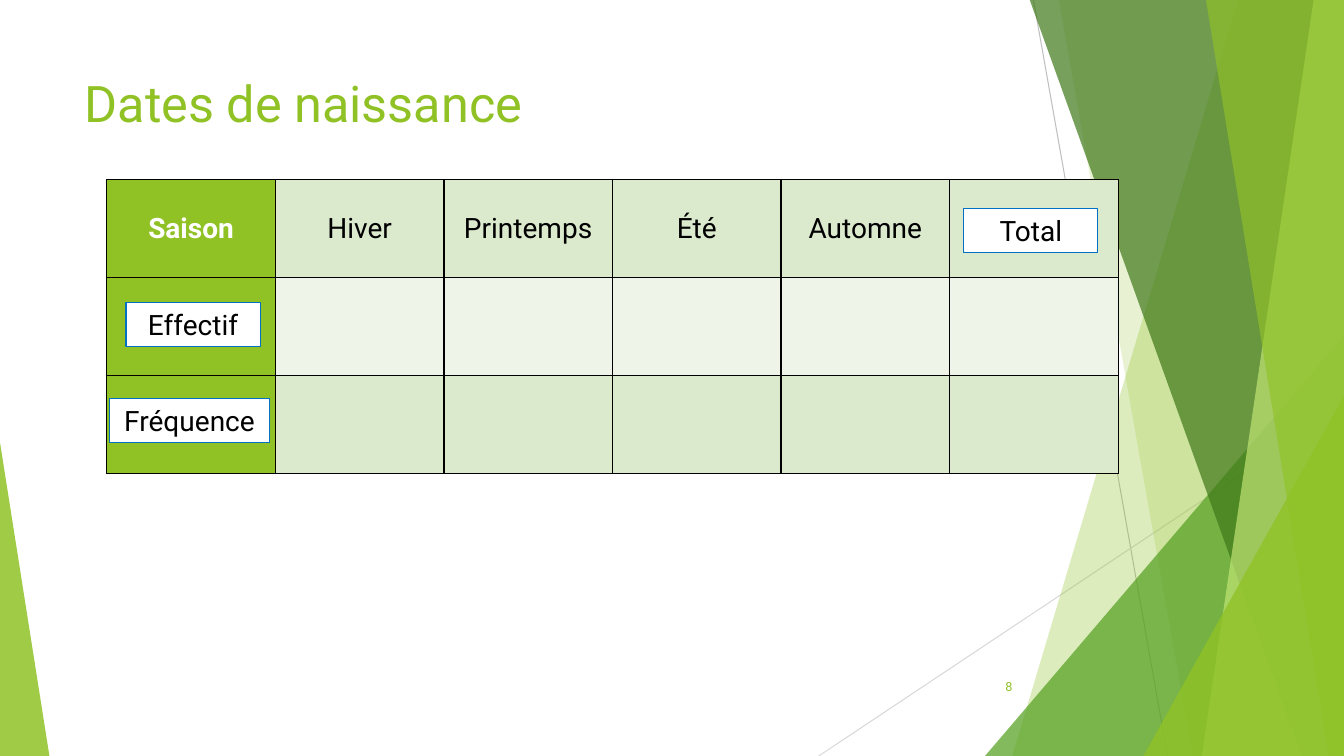
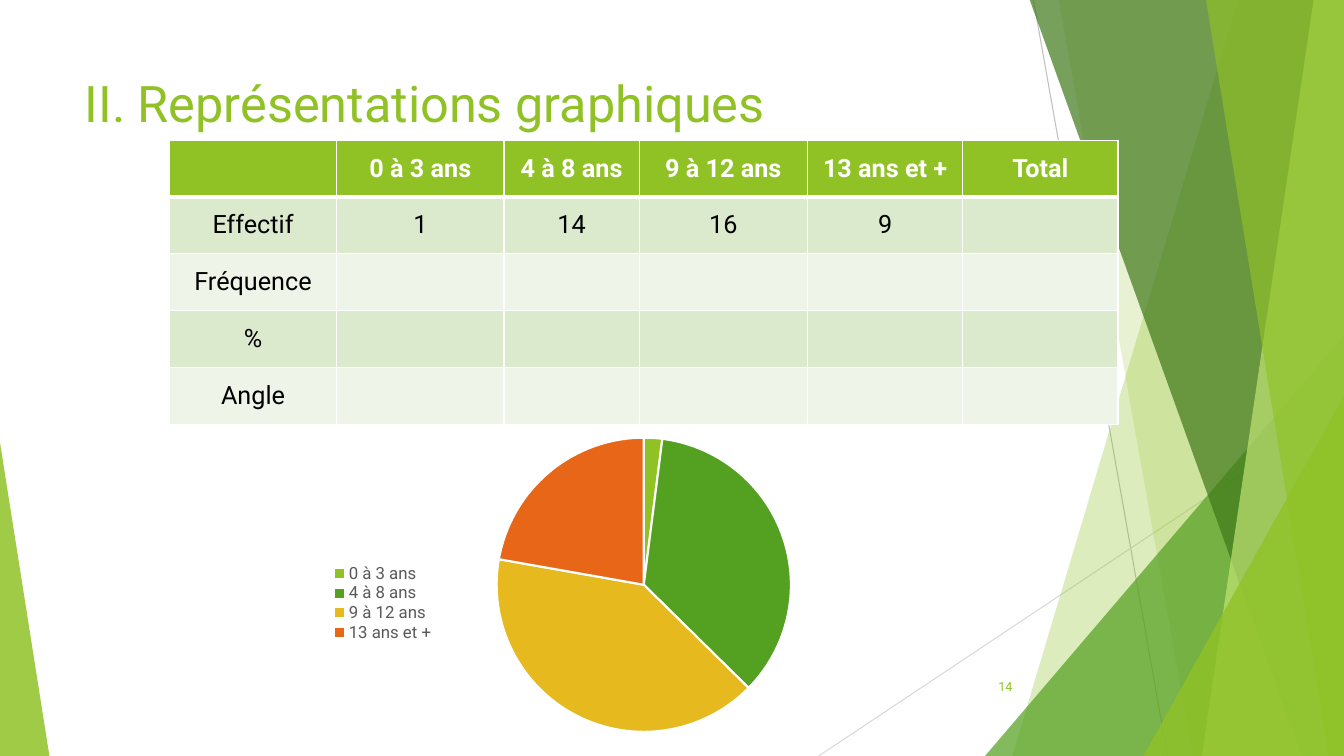
from dataclasses import dataclass

from lxml.etree import SubElement
from pptx import Presentation
from pptx.chart.data import CategoryChartData
from pptx.dml.color import RGBColor
from pptx.enum.chart import XL_CHART_TYPE as ChartType, XL_LEGEND_POSITION as LegendPosition
from pptx.enum.shapes import MSO_CONNECTOR as Connector, MSO_SHAPE as Shape
from pptx.enum.text import MSO_ANCHOR as Anchor, MSO_AUTO_SIZE as AutoSize, PP_ALIGN as Align
from pptx.oxml import parse_xml
from pptx.oxml.ns import nsdecls, qn
from pptx.util import Inches, Pt

FONT = "Roboto"
GREEN, DARK_GREEN, FOREST, LIME = "90C226", "54A021", "3F7819", "C0E474"
WHITE, BLACK, GREY, BLUE = "FFFFFF", "000000", "595959", "0070C0"
GOLD, ORANGE = "E6B91E", "E76618"
BANDS = ("DBE9CD", "EEF4E8")
PIE_COLOURS = (GREEN, DARK_GREEN, GOLD, ORANGE)
TOP, BOTTOM, RIGHT = -0.01, 7.5, 13.33


@dataclass(frozen=True)
class Ray:
    """A thin straight line of the backdrop."""
    start: tuple[float, float]
    end: tuple[float, float]
    colour: str


@dataclass(frozen=True)
class Beam:
    """A band from the top to the bottom edge, open to the right edge."""
    top_left: float
    bottom_left: float
    colour: str
    alpha: int


@dataclass(frozen=True)
class Wedge:
    """A right triangle standing on the bottom edge."""
    left: float
    top: float
    width: float
    apex: float
    colour: str
    alpha: int


@dataclass(frozen=True)
class Card:
    """A white label laid over a table cell."""
    label: str
    left: float
    top: float
    width: float = 1.33


@dataclass(frozen=True)
class Grid:
    """A table with a header column or a header row."""
    left: float
    top: float
    columns: tuple[float, ...]
    height: float
    rows: tuple[tuple[str, ...], ...]
    size: int
    border: str
    header_row: bool


BACKDROP = (
    Ray((10.25, 0), (11.58, 7.5), "BFBFBF"),
    Ray((13.33, 4.03), (8.12, 7.5), "D9D9D9"),
    Beam(12.28, 10.04, GREEN, 30),
    Beam(10.5, 11.83, GREEN, 20),
    Wedge(9.77, 3.33, 3.56, 1, DARK_GREEN, 72),
    Beam(10.21, 12.91, FOREST, 70),
    Beam(13.03, 11.92, LIME, 70),
    Beam(11.96, 13.18, GREEN, 65),
    Wedge(11.34, 3.93, 1.99, 1, GREEN, 80),
    Wedge(0, 4.39, 0.49, 0, GREEN, 85),
)

SEASONS = Grid(
    1.06, 1.78, (10.03 / 6,) * 6, 2.92,
    (("Saison", "Hiver", "Printemps", "Été", "Automne", ""), ("",) * 6, ("",) * 6),
    20, BLACK, header_row=False,
)
SEASON_CARDS = (
    Card("Effectif", 1.25, 3),
    Card("Total", 9.56, 2.07),
    Card("Fréquence", 1.09, 3.95, 1.58),
)

AGES = ("0 à 3 ans", "4 à 8 ans", "9 à 12 ans", "13 ans et +")
AGE_SHARES = (2, 35, 40, 22)
AGE_GRID = Grid(
    1.68, 1.39, (1.66, 1.66, 1.34, 1.67, 1.54, 1.54), 2.82,
    (
        ("", *AGES, "Total"),
        ("Effectif", "1", "14", "16", "9", ""),
        *((label,) + ("",) * 5 for label in ("Fréquence", "%", "Angle")),
    ),
    18, WHITE, header_row=True,
)


def rgb(colour: str) -> RGBColor:
    """Turn a hex string into a colour."""
    return RGBColor.from_string(colour)


def paint(shape, colour: str, alpha: int = 100) -> None:
    """Fill a shape, without shadow or outline."""
    shape.shadow.inherit = False
    shape.fill.solid()
    shape.fill.fore_color.rgb = rgb(colour)
    shape.line.fill.background()
    if alpha < 100:
        fill_colour = next(shape.element.iter(qn("a:srgbClr")))
        SubElement(fill_colour, qn("a:alpha")).set("val", str(alpha * 1000))


def style_font(font, size: int, colour: str, bold: bool = False) -> None:
    """Apply the deck's typeface to a font."""
    font.name, font.size, font.bold = FONT, Pt(size), bold
    font.color.rgb = rgb(colour)


def write(frame, text: str, size: int, colour: str, align: Align, bold: bool = False) -> None:
    """Put one formatted paragraph in a text frame."""
    frame.text = text
    paragraph = frame.paragraphs[0]
    paragraph.alignment = align
    for run in paragraph.runs:
        style_font(run.font, size, colour, bold)


def draw_backdrop_piece(shapes, piece: Ray | Beam | Wedge) -> None:
    """Draw one line, band or triangle of the backdrop."""
    if isinstance(piece, Ray):
        ray = shapes.add_connector(
            Connector.STRAIGHT, *(Inches(value) for value in piece.start + piece.end))
        ray.line.color.rgb = rgb(piece.colour)
        ray.line.width = Pt(0.75)
        SubElement(ray.element.spPr, qn("a:effectLst"))
        return
    if isinstance(piece, Beam):
        outline = shapes.build_freeform(Inches(piece.top_left), Inches(TOP))
        corners = ((RIGHT, TOP), (RIGHT, BOTTOM), (piece.bottom_left, BOTTOM))
        outline.add_line_segments([(Inches(x), Inches(y)) for x, y in corners], close=True)
        area = outline.convert_to_shape()
    else:
        area = shapes.add_shape(
            Shape.ISOSCELES_TRIANGLE, Inches(piece.left), Inches(piece.top),
            Inches(piece.width), Inches(BOTTOM - piece.top))
        area.adjustments[0] = piece.apex
    paint(area, piece.colour, piece.alpha)


def install_backdrop(slide) -> None:
    """Draw the backdrop once and hand it to the slide's layout."""
    backdrop = slide.shapes.add_group_shape()
    for piece in BACKDROP:
        draw_backdrop_piece(backdrop.shapes, piece)
    layout_tree = slide.slide_layout.shapes.element
    layout_tree.insert(2, backdrop.element)
    for number, properties in enumerate(layout_tree.iter(qn("p:cNvPr")), 1):
        properties.set("id", str(number))


def add_titled_slide(deck, heading: str, number: int):
    """Add a slide with its title and page number."""
    slide = deck.slides.add_slide(deck.slide_layouts[5])
    title = slide.shapes.title
    title.left, title.top = Inches(0.74), Inches(0.67)
    title.width, title.height = Inches(9.4), Inches(1.44)
    title.text_frame.vertical_anchor = Anchor.TOP
    title.text_frame.auto_size = AutoSize.NONE
    write(title.text_frame, heading, 36, GREEN, Align.LEFT)
    page = slide.shapes.add_textbox(Inches(9.39), Inches(6.61), Inches(0.75), Inches(0.4))
    page.text_frame.word_wrap = True
    page.text_frame.vertical_anchor = Anchor.MIDDLE
    write(page.text_frame, str(number), 9, GREEN, Align.RIGHT)
    return slide


def set_borders(cell_element, colour: str, top: int, bottom: int) -> None:
    """Draw the four borders of a table cell."""
    properties = cell_element.get_or_add_tcPr()
    sides = (("lnL", 1), ("lnR", 1), ("lnT", top), ("lnB", bottom))
    for position, (side, width) in enumerate(sides):
        properties.insert(position, parse_xml(
            f'<a:{side} {nsdecls("a")} w="{Pt(width)}"><a:solidFill>'
            f'<a:srgbClr val="{colour}"/></a:solidFill></a:{side}>'))


def add_grid(slide, grid: Grid) -> None:
    """Add a table with banded rows and green headers."""
    frame = slide.shapes.add_table(
        len(grid.rows), len(grid.columns), Inches(grid.left), Inches(grid.top),
        Inches(sum(grid.columns)), Inches(grid.height))
    table = frame.table
    table.first_row = table.horz_banding = False
    for column, width in zip(table.columns, grid.columns):
        column.width = Inches(width)
    for row in table.rows:
        row.height = Inches(grid.height / len(grid.rows))
    cell_elements = frame.element.iter(qn("a:tc"))
    for row_index, labels in enumerate(grid.rows):
        for column_index, label in enumerate(labels):
            header = (row_index if grid.header_row else column_index) == 0
            cell = table.cell(row_index, column_index)
            cell.vertical_anchor = Anchor.MIDDLE
            cell.fill.solid()
            band = BANDS[(row_index - grid.header_row) % 2]
            cell.fill.fore_color.rgb = rgb(GREEN if header else band)
            write(cell.text_frame, label, grid.size, WHITE if header else BLACK,
                  Align.CENTER, bold=header)
            top = 3 if grid.header_row and row_index == 1 else 1
            bottom = 3 if grid.header_row and row_index == 0 else 1
            set_borders(next(cell_elements), grid.border, top, bottom)


def add_card(slide, card: Card) -> None:
    """Add a white label with a blue outline."""
    label = slide.shapes.add_shape(
        Shape.RECTANGLE, Inches(card.left), Inches(card.top), Inches(card.width), Inches(0.44))
    paint(label, WHITE)
    label.line.color.rgb = rgb(BLUE)
    label.line.width = Pt(0.75)
    label.text_frame.word_wrap = True
    label.text_frame.auto_size = AutoSize.SHAPE_TO_FIT_TEXT
    label.text_frame.vertical_anchor = Anchor.TOP
    write(label.text_frame, card.label, 20, BLACK, Align.CENTER)


def manual_layout(x: float, y: float, w: float, h: float, inner: bool = False):
    """Build a chart layout from fractions of the chart area."""
    target = '<c:layoutTarget val="inner"/>' if inner else ""
    return parse_xml(
        f'<c:layout {nsdecls("c")}><c:manualLayout>{target}'
        '<c:xMode val="edge"/><c:yMode val="edge"/>'
        f'<c:x val="{x}"/><c:y val="{y}"/><c:w val="{w}"/><c:h val="{h}"/>'
        '</c:manualLayout></c:layout>')


def add_age_pie(slide) -> None:
    """Add the pie of age groups with its legend on the left."""
    ages = CategoryChartData()
    ages.categories = AGES
    ages.add_series("Series 1", AGE_SHARES)
    chart = slide.shapes.add_chart(
        ChartType.PIE, Inches(2.89), Inches(4.2), Inches(6.99), Inches(3.56), ages).chart
    chart.has_title = False
    style_font(chart.font, 10, BLACK)
    chart.has_legend = True
    chart.legend.position = LegendPosition.BOTTOM
    chart.legend.include_in_layout = False
    style_font(chart.legend.font, 12, GREY)
    pie = chart.plots[0]
    pie.vary_by_categories = True
    for index, colour in enumerate(PIE_COLOURS):
        slice_format = pie.series[0].points[index].format
        slice_format.fill.solid()
        slice_format.fill.fore_color.rgb = rgb(colour)
        slice_format.line.color.rgb = rgb(WHITE)
        slice_format.line.width = Pt(1.5)
    plot_area = next(chart.element.iter(qn("c:plotArea")))
    for automatic in plot_area.findall(qn("c:layout")):
        plot_area.remove(automatic)
    plot_area.insert(0, manual_layout(0.29, 0.04, 0.42, 0.82, inner=True))
    legend = next(chart.element.iter(qn("c:legend")))
    for automatic in legend.findall(qn("c:layout")):
        legend.remove(automatic)
    legend.find(qn("c:legendPos")).addnext(manual_layout(0.05, 0.39, 0.16, 0.22))


def main() -> None:
    """Build the two slides and save the deck."""
    deck = Presentation()
    deck.slide_width, deck.slide_height = Inches(RIGHT), Inches(BOTTOM)
    births = add_titled_slide(deck, "Dates de naissance", 8)
    install_backdrop(births)
    add_grid(births, SEASONS)
    for card in SEASON_CARDS:
        add_card(births, card)
    graphs = add_titled_slide(deck, "II. Représentations graphiques", 14)
    add_grid(graphs, AGE_GRID)
    add_age_pie(graphs)
    deck.save("out.pptx")


if __name__ == "__main__":
    main()
